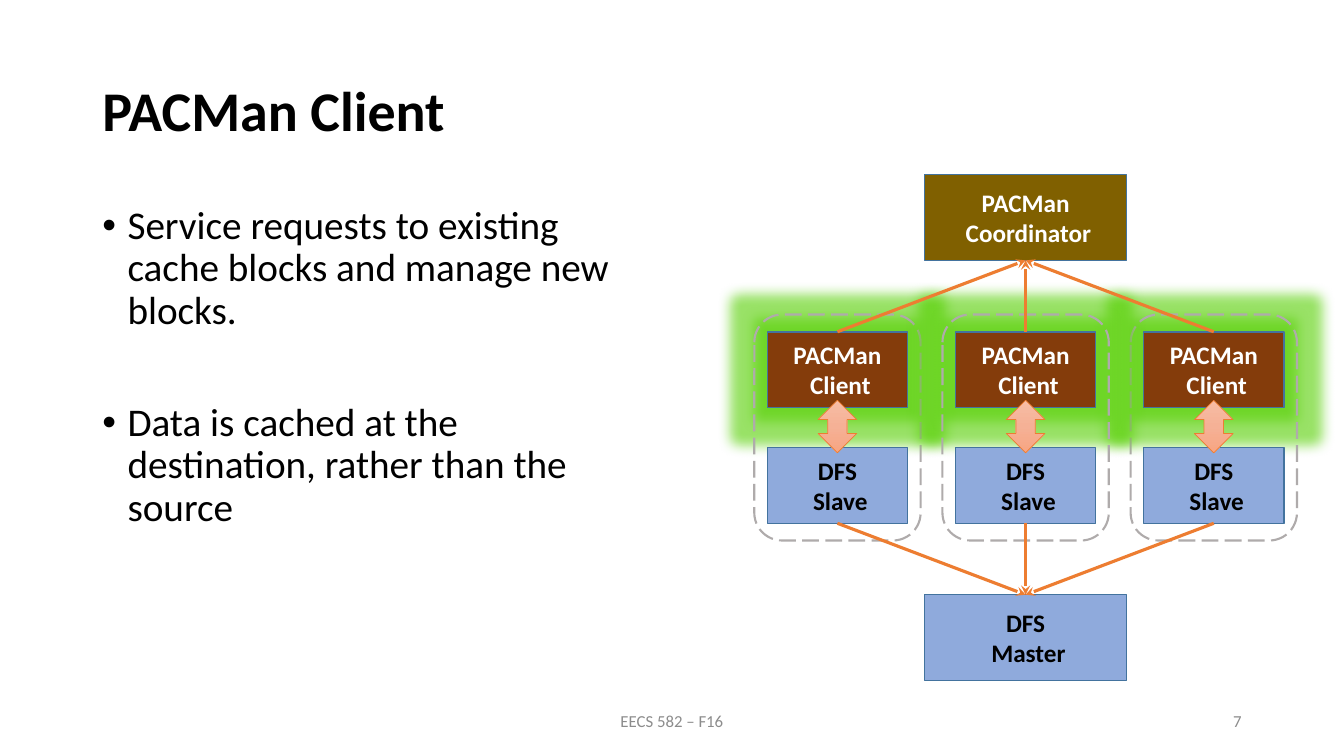
import pptx
import pptx.util
import pptx.dml.color
import pptx.enum.dml
import pptx.enum.shapes
import pptx.enum.text
import pptx.oxml
import pptx.oxml.ns
from lxml import etree

COLORS = {
    "black": "000000", "white": "FFFFFF", "footer": "8C8C8C",
    "coordinator": "806000", "client": "843C0B", "dfs": "8FAADC",
    "outline": "43739E", "frame": "AFABAB", "orange": "ED7D31", "glow": "55D000",
    "peach": "F7BDA5", "salmon": "F5B196", "coral": "F8A582",
}
COLUMNS, ROWS = 160, 90
SHAPES = pptx.enum.shapes.MSO_SHAPE
ALIGN = pptx.enum.text.PP_ALIGN
ANCHOR = pptx.enum.text.MSO_ANCHOR
TOP_SITE, BOTTOM_SITE = 0, 2


def rgb(name):
    return pptx.dml.color.RGBColor.from_string(COLORS[name])


def add_xml(parent, tag, **attributes):
    return etree.SubElement(parent, pptx.oxml.ns.qn(tag), attributes)


def write_text(paragraph, text, size=18, color="black", bold=False,
               align=ALIGN.LEFT, line_spacing=None, space_before=0):
    paragraph.text = text
    paragraph.alignment = align
    paragraph.space_before = pptx.util.Pt(space_before)
    if line_spacing:
        paragraph.line_spacing = line_spacing
    for run in paragraph.runs:
        run.font.name = "Calibri"
        run.font.size = pptx.util.Pt(size)
        run.font.bold = bold
        run.font.color.rgb = rgb(color)


def add_bullet(paragraph):
    properties = paragraph._p.get_or_add_pPr()
    indent = pptx.util.Inches(0.25)
    properties.set("marL", str(indent))
    properties.set("indent", str(-indent))
    add_xml(properties, "a:buFont", typeface="Arial")
    add_xml(properties, "a:buChar", char="•")


class SlideBuilder:
    """Draws elements on one slide, measured in columns and rows of its grid."""

    def __init__(self, presentation):
        self.column = presentation.slide_width / COLUMNS
        self.row = presentation.slide_height / ROWS
        self.slide = presentation.slides.add_slide(presentation.slide_layouts[5])

    def place(self, left, top, width, height):
        return [round(left * self.column), round(top * self.row),
                round(width * self.column), round(height * self.row)]

    def title(self, text, *box):
        title = self.slide.shapes.title
        title.left, title.top, title.width, title.height = self.place(*box)
        title.text_frame.vertical_anchor = ANCHOR.MIDDLE
        write_text(title.text_frame.paragraphs[0], text, size=40, bold=True,
                   line_spacing=0.9)

    def text_box(self, *box, anchor=ANCHOR.TOP):
        frame = self.slide.shapes.add_textbox(*self.place(*box)).text_frame
        frame.word_wrap = True
        frame.vertical_anchor = anchor
        return frame

    def bullets(self, items, *box):
        """Each item is a text and the space before it in points."""
        frame = self.text_box(*box)
        for index, (text, space) in enumerate(items):
            paragraph = frame.add_paragraph() if index else frame.paragraphs[0]
            write_text(paragraph, text, size=28, line_spacing=0.9, space_before=space)
            add_bullet(paragraph)

    def footer(self, text, align, *box):
        frame = self.text_box(*box, anchor=ANCHOR.MIDDLE)
        write_text(frame.paragraphs[0], text, size=12, color="footer", align=align)

    def centred_shape(self, kind, center, top, width, height, line, line_width):
        box = self.place(center - width / 2, top, width, height)
        shape = self.slide.shapes.add_shape(kind, *box)
        shape.shadow.inherit = False
        shape.line.color.rgb = rgb(line)
        shape.line.width = pptx.util.Pt(line_width)
        return shape

    def node(self, text, center, top, width, height, fill, color="black"):
        shape = self.centred_shape(SHAPES.RECTANGLE, center, top, width, height,
                                   "outline", 1)
        shape.fill.solid()
        shape.fill.fore_color.rgb = rgb(fill)
        shape.text_frame.vertical_anchor = ANCHOR.MIDDLE
        write_text(shape.text_frame.paragraphs[0], text, color=color, bold=True,
                   align=ALIGN.CENTER)
        return shape

    def glow(self, shape):
        effects = shape._element.spPr.find(pptx.oxml.ns.qn("a:effectLst"))
        glow = add_xml(effects, "a:glow", rad=str(pptx.util.Pt(18)))
        color = add_xml(glow, "a:srgbClr", val=COLORS["glow"])
        add_xml(color, "a:alpha", val="60000")

    def double_arrow(self, center, top, width, height):
        arrow = self.centred_shape(SHAPES.UP_DOWN_ARROW, center, top, width, height,
                                   "orange", 0.5)
        arrow.adjustments[0] = 0.386
        arrow.adjustments[1] = 0.5
        arrow.fill.gradient()
        arrow.fill.gradient_angle = 270
        stops = arrow._element.spPr.find(".//" + pptx.oxml.ns.qn("a:gsLst"))
        stops[:] = []
        for position, name in ((0, "peach"), (50000, "salmon"), (100000, "coral")):
            stop = add_xml(stops, "a:gs", pos=str(position))
            add_xml(stop, "a:srgbClr", val=COLORS[name])

    def dashed_frame(self, center, top, width, height):
        frame = self.centred_shape(SHAPES.ROUNDED_RECTANGLE, center, top, width, height,
                                   "frame", 1.5)
        frame.fill.background()
        frame.line.dash_style = pptx.enum.dml.MSO_LINE.LONG_DASH

    def arrow(self, source, source_site, target, target_site):
        connector = self.slide.shapes.add_connector(
            pptx.enum.shapes.MSO_CONNECTOR.STRAIGHT, 0, 0, 0, 0)
        connector.begin_connect(source, source_site)
        connector.end_connect(target, target_site)
        connector.line.color.rgb = rgb("orange")
        connector.line.width = pptx.util.Pt(2.25)
        add_xml(connector.line._get_or_add_ln(), "a:tailEnd", type="stealth")
        add_xml(connector._element.spPr, "a:effectLst")


def main():
    presentation = pptx.Presentation()
    presentation.slide_width = pptx.util.Inches(13.333)
    presentation.slide_height = pptx.util.Inches(7.5)
    builder = SlideBuilder(presentation)

    builder.title("PACMan Client", 11, 4.8, 138, 17.4)
    builder.bullets([
        ("Service requests to existing cache blocks and manage new blocks.", 10),
        ("Data is cached at the destination, rather than the source", 50),
    ], 11, 23.9, 66.1, 57)
    builder.footer("7", ALIGN.RIGHT, 113, 83.4, 36, 4.8)
    builder.footer("EECS 582 – F16", ALIGN.CENTER, 53, 83.4, 54, 4.8)

    middle, pitch = 122.1, 22.4
    coordinator = builder.node("PACMan\v Coordinator", middle, 20.8, 24, 10.2,
                               "coordinator", "white")
    machines = []
    for offset in (-1, 1, 0):
        center = middle + offset * pitch
        client = builder.node("PACMan\v Client", center, 39.5, 16.7, 9, "client", "white")
        builder.glow(client)
        slave = builder.node("DFS\v Slave", center, 53.3, 16.7, 9, "dfs")
        builder.double_arrow(center, 47.65, 4.6, 6.25)
        builder.dashed_frame(center, 37.45, 19.8, 26.9)
        machines.append((client, slave))
    master = builder.node("DFS\v Master", middle, 70.8, 24, 10.2, "dfs")

    for client, slave in machines:
        builder.arrow(client, TOP_SITE, coordinator, BOTTOM_SITE)
        builder.arrow(slave, BOTTOM_SITE, master, TOP_SITE)

    presentation.save("out.pptx")


if __name__ == "__main__":
    main()
